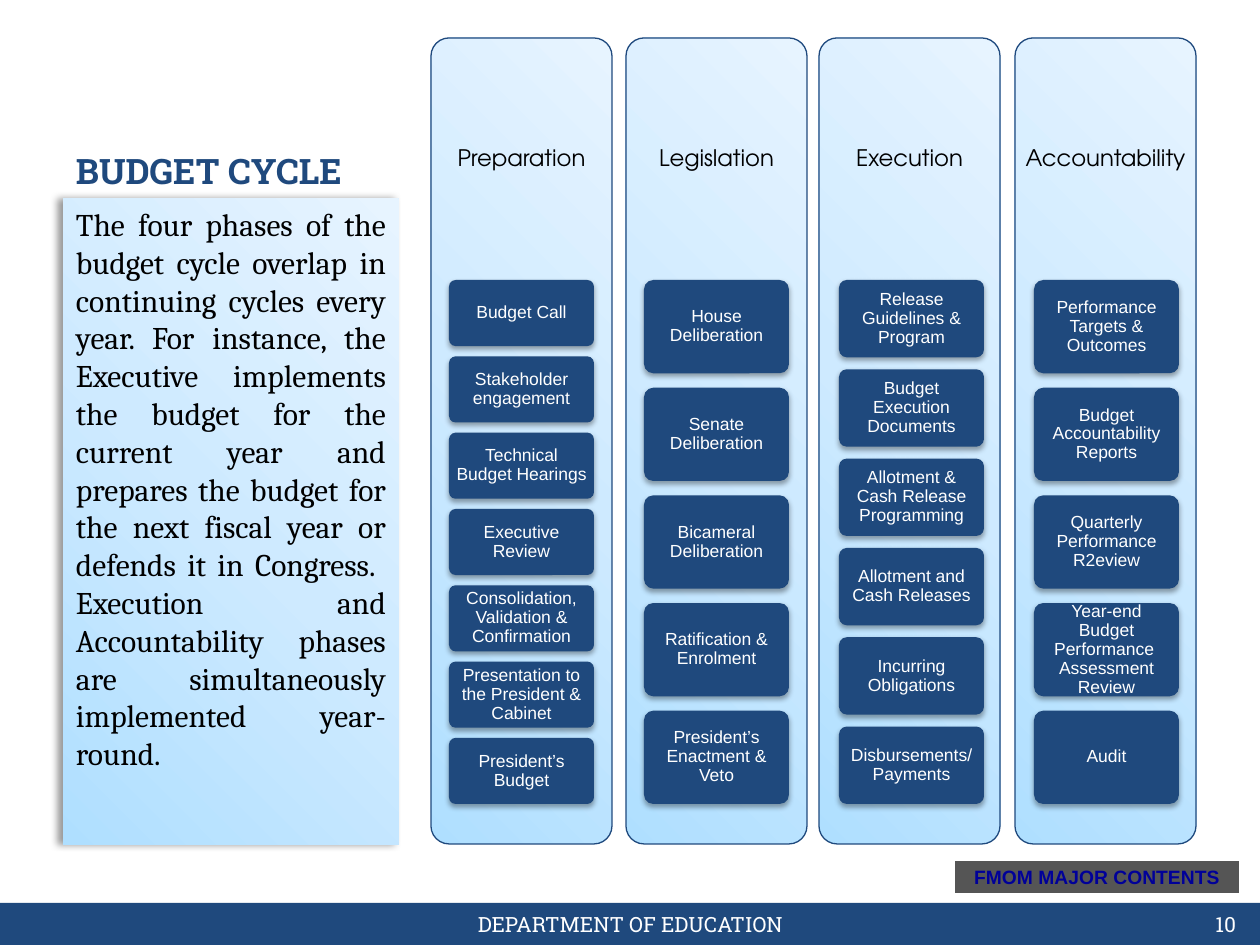
import copy

import pptx
import pptx.dml.color
import pptx.enum.shapes
import pptx.enum.text
import pptx.oxml
import pptx.oxml.ns
import pptx.util

SHAPE = pptx.enum.shapes.MSO_SHAPE
ALIGN = pptx.enum.text.PP_ALIGN
ANCHOR = pptx.enum.text.MSO_ANCHOR

PX = 914400 // 126
NAVY, WHITE, BLACK = "1F497D", "FFFFFF", "000000"
PALE_BLUES = [(0, "AFDFFF"), (0.5, "CEEAFF"), (1, "E7F4FF")]

TITLE = "BUDGET CYCLE"
SUMMARY = (
    "The four phases of the budget cycle overlap in continuing cycles every year. "
    "For instance, the Executive implements the budget for the current year and "
    "prepares the budget for the next fiscal year or defends it in Congress.  "
    "Execution and Accountability phases are simultaneously implemented year-round."
)
# phase, left edge of its panel, steps
PHASES = [
    ("Preparation", 431, [
        "Budget Call", "Stakeholder engagement", "Technical Budget Hearings",
        "Executive Review", "Consolidation, Validation & Confirmation",
        "Presentation to the President & Cabinet", "President’s Budget"]),
    ("Legislation", 626, [
        "House Deliberation", "Senate Deliberation", "Bicameral Deliberation",
        "Ratification & Enrolment", "President’s Enactment & Veto"]),
    ("Execution", 819, [
        "Release Guidelines & Program", "Budget Execution Documents",
        "Allotment & Cash Release Programming", "Allotment and Cash Releases",
        "Incurring Obligations", "Disbursements/ Payments"]),
    ("Accountability", 1015, [
        "Performance Targets & Outcomes", "Budget Accountability Reports",
        "Quarterly Performance R2eview",
        "Year-end Budget Performance  Assessment Review", "Audit"]),
]
PANEL_TOP, PANEL_WIDTH, PANEL_HEIGHT, HEADING_HEIGHT = 38, 181, 806, 242
STEP_LEFT, STEP_PITCH, STEP_WIDTH = 449, 195, 145
STEPS_TOP, STEPS_HEIGHT = 280, 524
GAP_RATIO = 2 / 13  # gap between steps, as a share of a step's height


def px(length):
    return round(length * PX)


def rgb(colour):
    return pptx.dml.color.RGBColor.from_string(colour)


def add_box(slide, kind, left, top, width, height, fill, line=None):
    """Add a shape filled with one colour or with a list of gradient stops."""
    box = slide.shapes.add_shape(kind, px(left), px(top), px(width), px(height))
    box.shadow.inherit = False
    if kind == SHAPE.ROUNDED_RECTANGLE:
        box.adjustments[0] = 0.1
    if isinstance(fill, str):
        box.fill.solid()
        box.fill.fore_color.rgb = rgb(fill)
    else:
        box.fill.gradient()
        box.fill.gradient_angle = 45
        stop_list = box._element.spPr.find(".//" + pptx.oxml.ns.qn("a:gsLst"))
        while len(stop_list) < len(fill):
            stop_list.append(copy.deepcopy(stop_list[0]))
        for stop, (position, colour) in zip(box.fill.gradient_stops, fill):
            stop.position = position
            stop.color.rgb = rgb(colour)
    if line:
        box.line.color.rgb = rgb(line)
        box.line.width = pptx.util.Pt(0.75)
    else:
        box.line.fill.background()
    return box


def add_shadow(box, opacity, blur, distance, angle):
    """Blur and distance are points, angle is degrees, opacity is per cent."""
    effects = box._element.spPr.find(pptx.oxml.ns.qn("a:effectLst"))
    effects.append(pptx.oxml.parse_xml(
        f'<a:outerShdw {pptx.oxml.ns.nsdecls("a")} blurRad="{pptx.util.Pt(blur)}" '
        f'dist="{pptx.util.Pt(distance)}" dir="{angle * 60000}" rotWithShape="0">'
        f'<a:srgbClr val="{BLACK}"><a:alpha val="{opacity * 1000}"/></a:srgbClr>'
        f'</a:outerShdw>'))


def write(box, text, font, size, colour, align=ALIGN.CENTER, anchor=ANCHOR.MIDDLE,
          bold=False, inset=(13, 6), spacing=None):
    frame = box.text_frame
    frame.text = text
    frame.word_wrap = True
    frame.vertical_anchor = anchor
    frame.margin_left = frame.margin_right = px(inset[0])
    frame.margin_top = frame.margin_bottom = px(inset[1])
    paragraph = frame.paragraphs[0]
    paragraph.alignment = align
    if spacing:
        paragraph.line_spacing = spacing
    for run in paragraph.runs:
        run.font.name = font
        run.font.size = pptx.util.Pt(size)
        run.font.bold = bold
        run.font.color.rgb = rgb(colour)


def add_text(slide, left, top, width, height, *content, **style):
    label = slide.shapes.add_textbox(px(left), px(top), px(width), px(height))
    write(label, *content, **style)


def add_phase(slide, index, phase, panel_left, steps):
    add_box(slide, SHAPE.ROUNDED_RECTANGLE, panel_left, PANEL_TOP,
            PANEL_WIDTH, PANEL_HEIGHT, PALE_BLUES, NAVY)
    add_text(slide, panel_left, PANEL_TOP, PANEL_WIDTH, HEADING_HEIGHT,
             phase, "TeX Gyre Adventor", 13, BLACK, inset=(6, 6), spacing=0.9)
    step_height = STEPS_HEIGHT / (len(steps) + (len(steps) - 1) * GAP_RATIO)
    for row, step in enumerate(steps):
        step_top = STEPS_TOP + row * step_height * (1 + GAP_RATIO)
        block = add_box(slide, SHAPE.ROUNDED_RECTANGLE, STEP_LEFT + index * STEP_PITCH,
                        step_top, STEP_WIDTH, step_height, NAVY)
        add_shadow(block, 35, 3.1, 1.8, 90)
        write(block, step, "Arial", 10, WHITE, inset=(5, 4), spacing=0.9)


def main():
    deck = pptx.Presentation()
    deck.slide_width, deck.slide_height = px(1260), px(945)
    slide = deck.slides.add_slide(deck.slide_layouts[6])

    add_box(slide, SHAPE.RECTANGLE, 0, 903, 1260, 42, NAVY)
    add_text(slide, 431, 903, 399, 42, "DEPARTMENT OF EDUCATION",
             "Roboto Slab", 12, WHITE)
    add_text(slide, 63, 38, 415, 160, TITLE, "Roboto Slab", 20, NAVY,
             align=ALIGN.LEFT, anchor=ANCHOR.BOTTOM, bold=True)

    for index, phase in enumerate(PHASES):
        add_phase(slide, index, *phase)

    summary = add_box(slide, SHAPE.RECTANGLE, 63, 199, 336, 646, PALE_BLUES)
    add_shadow(summary, 40, 4, 3, 180)
    write(summary, SUMMARY, "Cambria", 18, BLACK,
          align=ALIGN.JUSTIFY, anchor=ANCHOR.TOP)

    add_text(slide, 955, 903, 294, 42, "10", "Roboto Slab", 12, WHITE,
             align=ALIGN.RIGHT)
    contents_button = add_box(slide, SHAPE.ACTION_BUTTON_CUSTOM,
                              955, 861, 284, 32, "555555")
    write(contents_button, "FMOM MAJOR CONTENTS", "Arial", 11, "000099", bold=True)

    deck.save("out.pptx")


if __name__ == "__main__":
    main()
